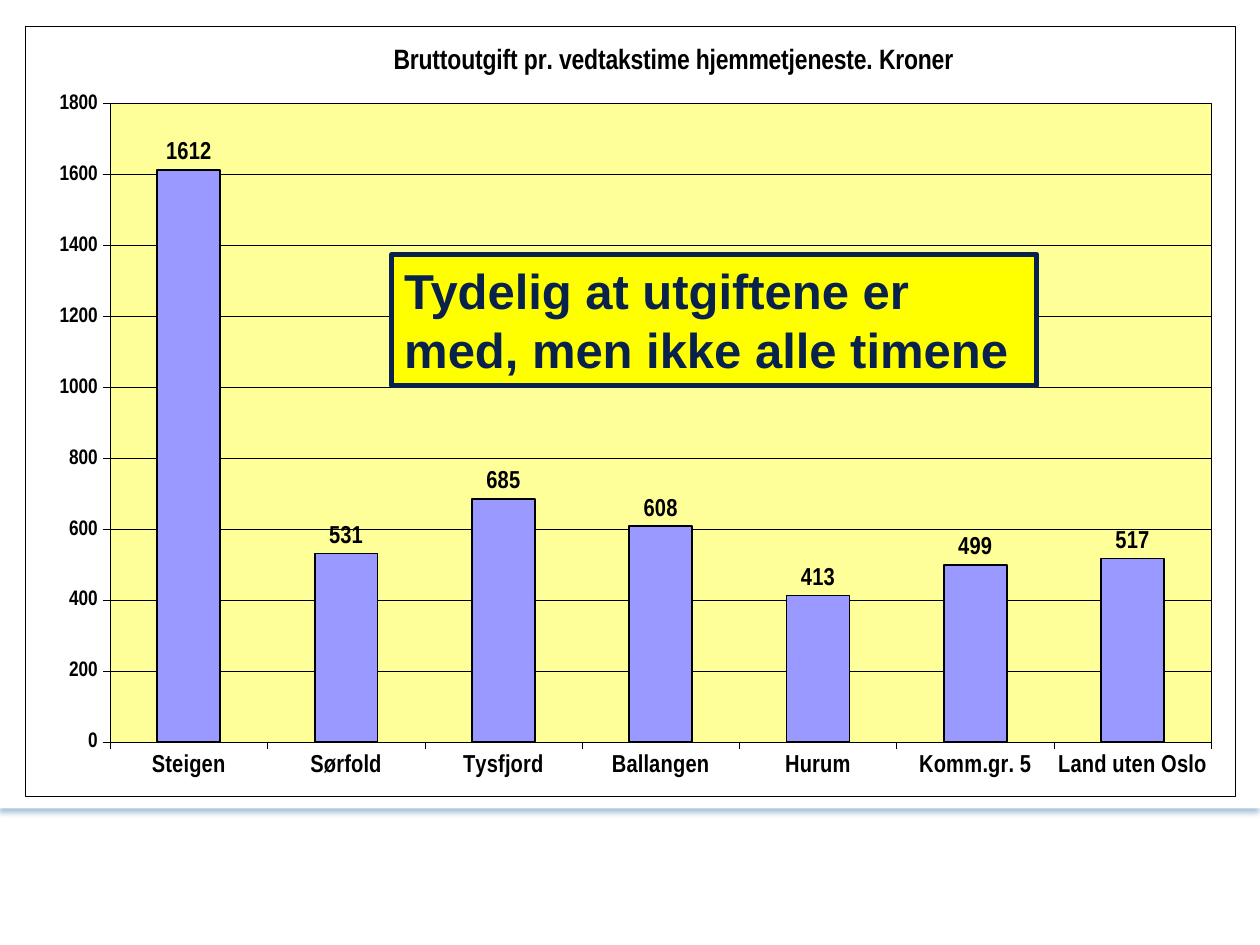
from lxml.etree import fromstring
from pptx import Presentation
from pptx.chart.data import CategoryChartData
from pptx.dml.color import RGBColor
from pptx.enum.chart import XL_CHART_TYPE, XL_LABEL_POSITION, XL_TICK_MARK
from pptx.enum.shapes import MSO_SHAPE
from pptx.enum.text import MSO_ANCHOR, MSO_AUTO_SIZE, PP_ALIGN
from pptx.oxml.ns import nsdecls
from pptx.util import Cm, Pt

HUES = {"white": "FFFFFF", "black": "000000", "navy": "09224B", "yellow": "FFFF00",
        "cream": "FFFF99", "lilac": "9999FF", "shade": "005193"}
COSTS = {"Steigen": 1612, "Sørfold": 531, "Tysfjord": 685, "Ballangen": 608,
         "Hurum": 413, "Komm.gr. 5": 499, "Land uten Oslo": 517}


class Deck:
    face = "Arial"
    slim = "Arial Narrow"

    def __init__(self, slide):
        self.slide = slide

    def tint(self, name):
        return RGBColor.from_string(HUES[name])

    def font(self, font, size, face, hue="black"):
        font.size, font.name, font.bold = Pt(size), face, True
        font.color.rgb = self.tint(hue)

    def fill(self, item, hue):
        item.fill.solid()
        item.fill.fore_color.rgb = self.tint(hue)

    def line(self, line, hue, width):
        line.color.rgb = self.tint(hue)
        line.width = Pt(width)

    def rect(self, box, hue):
        shape = self.slide.shapes.add_shape(MSO_SHAPE.RECTANGLE, *map(Cm, box))
        shape.shadow.inherit = False
        self.fill(shape, hue)
        shape.line.fill.background()
        return shape

    def panel(self, box):
        shape = self.rect(box, "white")
        props = shape.element.spPr
        props.remove(props.xpath("a:effectLst")[0])
        props.append(fromstring(
            f'<a:effectLst {nsdecls("a")}><a:outerShdw blurRad="{Pt(3.1)}" dist="{Pt(1.8)}" '
            f'dir="5400000" rotWithShape="0"><a:srgbClr val="{HUES["shade"]}">'
            '<a:alpha val="35000"/></a:srgbClr></a:outerShdw></a:effectLst>'))

    def note(self, box, text):
        shape = self.rect(box, "yellow")
        self.line(shape.line, "navy", 3)
        frame = shape.text_frame
        frame.word_wrap = True
        frame.auto_size = MSO_AUTO_SIZE.SHAPE_TO_FIT_TEXT
        frame.vertical_anchor = MSO_ANCHOR.TOP
        para = frame.paragraphs[0]
        para.alignment = PP_ALIGN.LEFT
        run = para.add_run()
        run.text = text
        self.font(run.font, 28, self.face, "navy")

    def axis(self, axis, size):
        self.font(axis.tick_labels.font, size, self.slim)
        self.line(axis.format.line, "black", 0.25)
        axis.major_tick_mark = XL_TICK_MARK.OUTSIDE
        axis.minor_tick_mark = XL_TICK_MARK.NONE

    def place(self, node, spot, index, inner=False):
        for old in node.xpath("c:layout"):
            node.remove(old)
        keys = ("x", "y", "w", "h")[:len(spot)]
        parts = '<c:layoutTarget val="inner"/>' if inner else ""
        parts += "".join(f'<c:{key}Mode val="edge"/>' for key in keys[:2])
        parts += "".join(f'<c:{key} val="{val}"/>' for key, val in zip(keys, spot))
        node.insert(index, fromstring(
            f'<c:layout {nsdecls("c")}><c:manualLayout>{parts}</c:manualLayout></c:layout>'))

    def frame(self, hue):
        return fromstring(
            f'<c:spPr {nsdecls("c", "a")}><a:solidFill><a:srgbClr val="{HUES[hue]}"/></a:solidFill>'
            f'<a:ln w="{Pt(0.25)}"><a:solidFill><a:srgbClr val="{HUES["black"]}"/></a:solidFill>'
            '</a:ln></c:spPr>')

    def chart(self, box, title, costs):
        data = CategoryChartData(number_format="0")
        data.categories = list(costs)
        data.add_series("Series 1", list(costs.values()))
        chart = self.slide.shapes.add_chart(
            XL_CHART_TYPE.COLUMN_CLUSTERED, *map(Cm, box), data).chart
        self.font(chart.font, 10.5, self.slim)
        chart.has_legend = False
        chart.has_title = True
        run = chart.chart_title.text_frame.paragraphs[0].add_run()
        run.text = title
        self.font(run.font, 16, self.slim)

        self.axis(chart.category_axis, 14)
        axis = chart.value_axis
        self.axis(axis, 12)
        axis.minimum_scale, axis.maximum_scale, axis.major_unit = 0, 1800, 200
        axis.tick_labels.number_format = "0"
        axis.tick_labels.number_format_is_linked = False
        self.line(axis.major_gridlines.format.line, "black", 0.25)

        plot = chart.plots[0]
        plot.gap_width, plot.vary_by_categories = 150, False
        bars = plot.series[0]
        self.fill(bars.format, "lilac")
        self.line(bars.format.line, "black", 1)
        labels = bars.data_labels
        labels.show_value = True
        labels.number_format, labels.number_format_is_linked = "0", False
        labels.position = XL_LABEL_POSITION.OUTSIDE_END
        self.font(labels.font, 14, self.slim)

        root = chart.element
        area = root.xpath("c:chart/c:plotArea")[0]
        self.place(area, (0.07, 0.1, 0.91, 0.83), 0, True)
        area.append(self.frame("cream"))
        self.place(root.xpath("c:chart/c:title")[0], (0.3, 0.02), 1)
        root.xpath("c:chart")[0].addnext(self.frame("white"))


def main():
    show = Presentation()
    show.slide_width, show.slide_height = Cm(25.4), Cm(19.05)
    deck = Deck(show.slides.add_slide(show.slide_layouts[6]))
    deck.panel((0, 0, 25.4, 16.3))
    deck.chart((0.51, 0.53, 24.4, 15.52),
               "Bruttoutgift pr. vedtakstime hjemmetjeneste. Kroner", COSTS)
    deck.note((7.9, 5.13, 13, 2.64), "Tydelig at utgiftene er med, men ikke alle timene")
    show.save("out.pptx")


if __name__ == "__main__":
    main()
